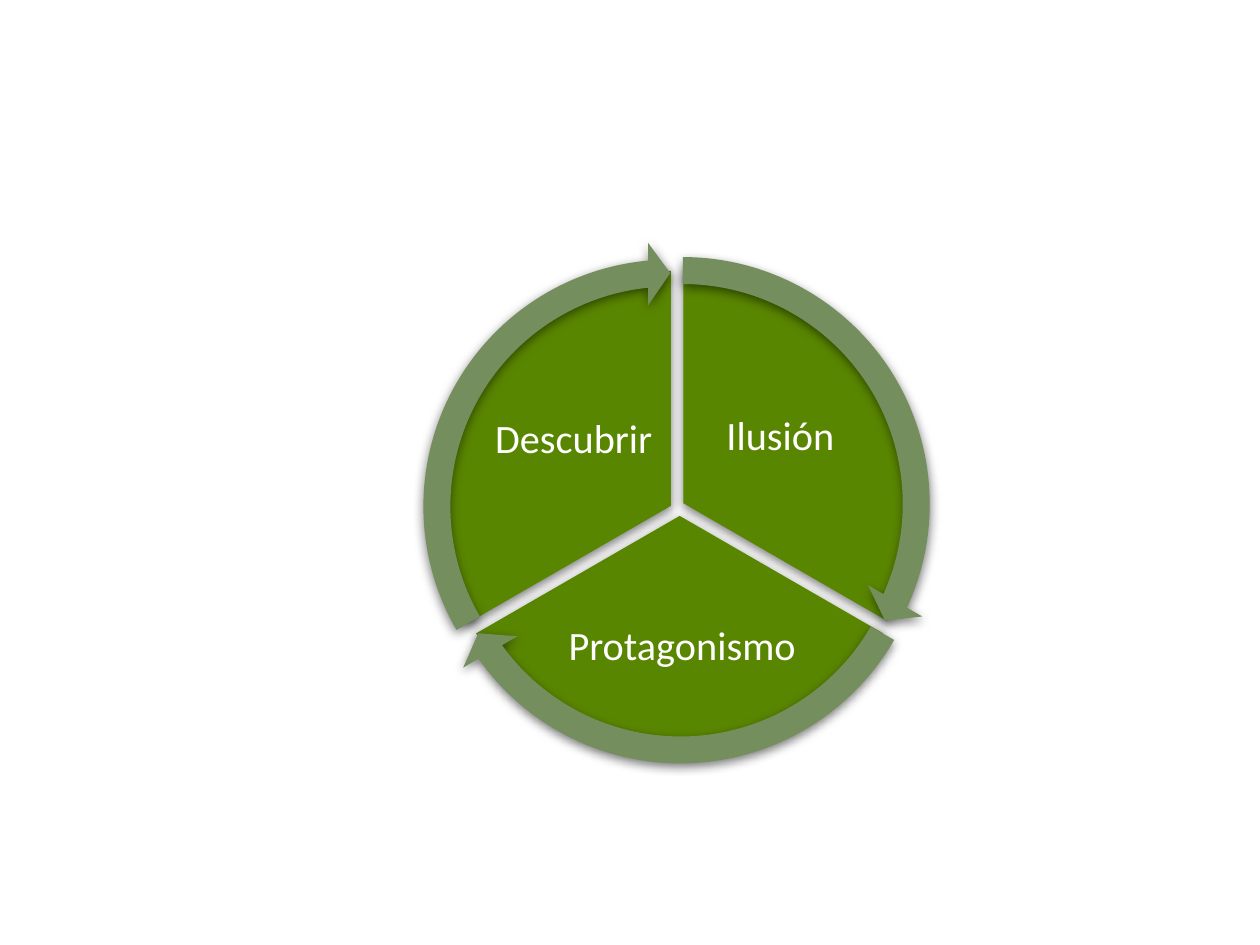
"""Builds a slide with a three-part cycle: pie slices ringed by circular arrows."""
from math import cos, radians, sin

from lxml.etree import SubElement
from pptx import Presentation
from pptx.dml.color import RGBColor
from pptx.enum.shapes import MSO_SHAPE
from pptx.enum.text import MSO_ANCHOR, PP_ALIGN
from pptx.oxml.ns import qn
from pptx.util import Inches, Pt

COLORS = {"slice": "598600", "arrow": "758E5E", "text": "FFFFFF", "shadow": "000000"}
SLICE_SIZE = Inches(3.73)
ARROW_SIZE = Inches(4.2)
SWEEP = 120
DEGREE = 60000

# label, slice corner, start angle, insets (left, top, right, bottom), arrow corner, arrow angles
STAGES = [
    ("Ilusión", (3.56, 2.13), 270, (2, 0.82, 0.46, 1.86), (3.32, 1.9), (14.725, 161.994)),
    ("Protagonismo", (3.53, 2.23), 30, (0.92, 2.45, 0.88, 0.37), (3.3, 2), (86.72, 18.005)),
    ("Descubrir", (3.46, 2.15), 150, (0.46, 0.82, 2, 1.86), (3.22, 1.92), (158.73, 90)),
]


def style(sp, color):
    sp.fill.solid()
    sp.fill.fore_color.rgb = RGBColor.from_string(COLORS[color])
    sp.line.fill.background()
    sp.shadow.inherit = False
    effects = sp._element.spPr.find(qn("a:effectLst"))
    shadow = SubElement(effects, qn("a:outerShdw"), blurRad=str(Pt(6)), dist=str(Pt(2)),
                        dir=str(90 * DEGREE), rotWithShape="0")
    tint = SubElement(shadow, qn("a:srgbClr"), val=COLORS["shadow"])
    SubElement(tint, qn("a:alpha"), val="50000")


def draw_sector(sp, start):
    radius = SLICE_SIZE // 2
    rim = [radius + round(radius * f(radians(start))) for f in (cos, sin)]
    outline = next(sp._element.iter(qn("a:path")))
    for child in list(outline):
        outline.remove(child)
    outline.set("w", str(SLICE_SIZE))
    outline.set("h", str(SLICE_SIZE))

    def add_point(tag, x, y):
        SubElement(SubElement(outline, qn(tag)), qn("a:pt"), x=str(x), y=str(y))

    add_point("a:moveTo", *rim)
    SubElement(outline, qn("a:arcTo"), wR=str(radius), hR=str(radius),
               stAng=str(start * DEGREE), swAng=str(SWEEP * DEGREE))
    add_point("a:lnTo", radius, radius)
    add_point("a:lnTo", *rim)
    SubElement(outline, qn("a:close"))


def add_slice(s, label, corner, start, insets):
    x, y = map(Inches, corner)
    builder = s.shapes.build_freeform(x, y)
    builder.add_line_segments([(x + SLICE_SIZE, y), (x + SLICE_SIZE, y + SLICE_SIZE)])
    sp = builder.convert_to_shape()
    draw_sector(sp, start)
    style(sp, "slice")
    tf = sp.text_frame
    tf.word_wrap = True
    tf.vertical_anchor = MSO_ANCHOR.MIDDLE
    tf.margin_left, tf.margin_top, tf.margin_right, tf.margin_bottom = map(Inches, insets)
    tf.text = label
    p = tf.paragraphs[0]
    p.alignment = PP_ALIGN.CENTER
    p.line_spacing = 0.9
    font = p.runs[0].font
    font.name = "Calibri"
    font.size = Pt(23)
    font.color.rgb = RGBColor.from_string(COLORS["text"])


def add_arrow(s, corner, angles):
    sp = s.shapes.add_shape(MSO_SHAPE.CIRCULAR_ARROW, *map(Inches, corner),
                            ARROW_SIZE, ARROW_SIZE)
    for i, value in enumerate((0.051, 3.275, *angles, 0.059)):
        sp.adjustments[i] = value
    style(sp, "arrow")


def main():
    prs = Presentation()
    prs.slide_width, prs.slide_height = Inches(10), Inches(7.5)
    s = prs.slides.add_slide(prs.slide_layouts[6])
    for label, slice_corner, start, insets, arrow_corner, angles in STAGES:
        add_slice(s, label, slice_corner, start, insets)
        add_arrow(s, arrow_corner, angles)
    prs.save("out.pptx")


if __name__ == "__main__":
    main()
